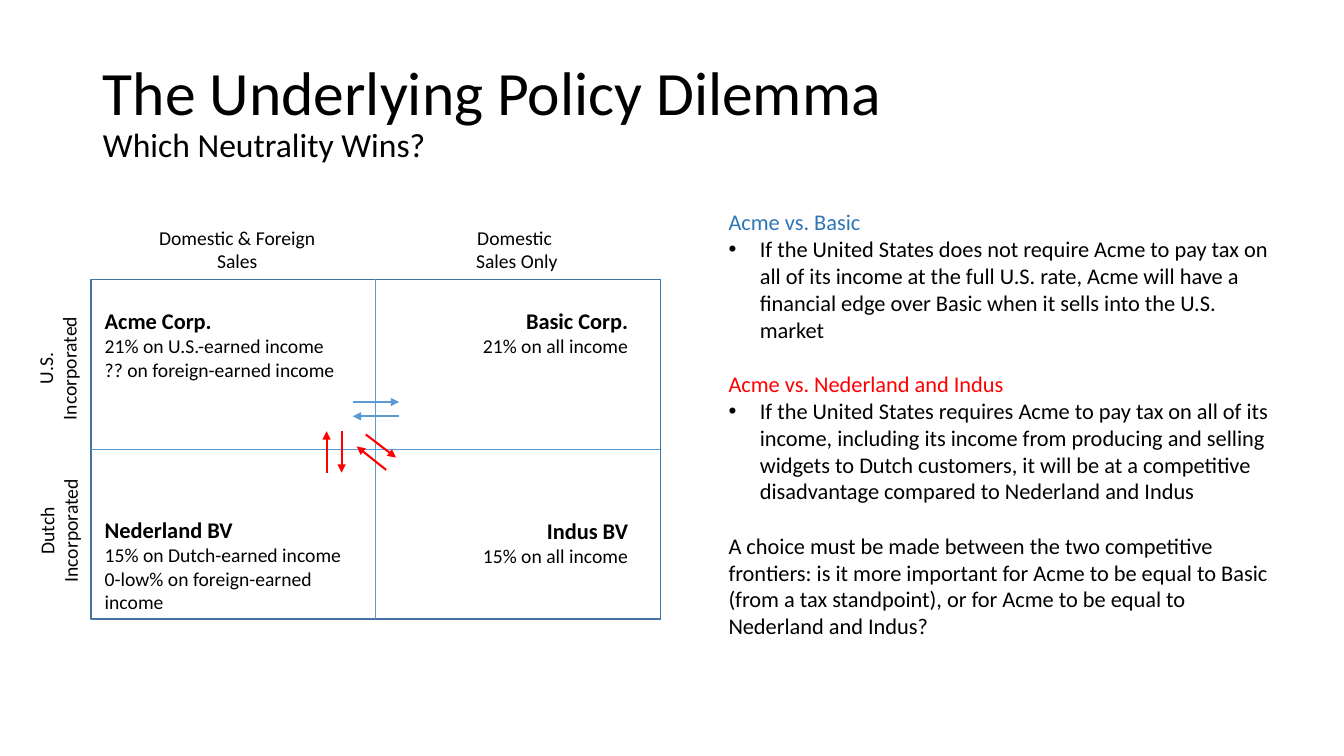
import pptx
import pptx.util
import pptx.dml.color
import pptx.enum.text
import pptx.enum.shapes
import pptx.oxml
import pptx.oxml.ns

Cm, Pt = pptx.util.Cm, pptx.util.Pt
RGB = pptx.dml.color.RGBColor
ALIGN = pptx.enum.text.PP_ALIGN
LINE = pptx.enum.shapes.MSO_CONNECTOR.STRAIGHT

FONT = "Calibri"
BLACK = RGB(0, 0, 0)
RED = RGB(0xFF, 0, 0)
BLUE = RGB(0x5B, 0x9B, 0xD5)
NAVY = RGB(0x43, 0x73, 0x9E)
DEEP = RGB(0x2E, 0x75, 0xB6)

TITLE = ("The Underlying Policy Dilemma", "Which Neutrality Wins?")
GRID = (2.29, 7.04, 14.35, 8.56)

# left, top, width, height, rotation, lines
HEADS = [
    (3.73, 5.56, 4.5, 1.45, 0, ["Domestic & Foreign", "Sales"]),
    (11.73, 5.56, 2.59, 1.45, 0, ["Domestic ", "Sales Only"]),
    (-0.13, 8.56, 3.15, 1.45, 270, ["U.S.", "Incorporated"]),
    (-0.1, 12.65, 3.15, 1.45, 270, ["Dutch", "Incorporated"]),
]

# left, top, width, height, alignment, lines
FIRMS = [
    (2.39, 7.62, 6.45, 2.13, ALIGN.LEFT,
     ["Acme Corp.", "21% on U.S.-earned income", "?? on foreign-earned income"]),
    (10.9, 7.62, 5.18, 1.55, ALIGN.RIGHT,
     ["Basic Corp.", "21% on all income"]),
    (2.39, 12.88, 6.53, 2.74, ALIGN.LEFT,
     ["Nederland BV", "15% on Dutch-earned income", "0-low% on foreign-earned", "income"]),
    (10.9, 12.9, 5.18, 1.55, ALIGN.RIGHT,
     ["Indus BV", "15% on all income"]),
]

# text, colour, bulleted, space before in points
ESSAY_BOX = (18.11, 5.13, 14.4, 11.2)
ESSAY = [
    ("Acme vs. Basic", DEEP, False, 0),
    ("If the United States does not require Acme to pay tax on all of its income "
     "at the full U.S. rate, Acme will have a financial edge over Basic when it "
     "sells into the U.S. market", BLACK, True, 0),
    ("Acme vs. Nederland and Indus", RED, False, 19.5),
    ("If the United States requires Acme to pay tax on all of its income, including "
     "its income from producing and selling widgets to Dutch customers, it will be "
     "at a competitive disadvantage compared to Nederland and Indus", BLACK, True, 0),
    ("A choice must be made between the two competitive frontiers: is it more "
     "important for Acme to be equal to Basic (from a tax standpoint), or for Acme "
     "to be equal to Nederland and Indus?", BLACK, False, 19.5),
]

# start x, start y, end x, end y, colour
ARROWS = [
    (8.89, 10.13, 10.06, 10.13, BLUE),
    (10.06, 10.49, 8.89, 10.49, BLUE),
    (8.61, 10.87, 8.61, 11.91, RED),
    (8.23, 11.91, 8.23, 10.87, RED),
    (9.22, 10.95, 9.98, 11.53, RED),
    (9.73, 11.84, 8.99, 11.25, RED),
]


def style(run, size, color=BLACK, bold=False):
    run.font.name, run.font.size, run.font.bold = FONT, Pt(size), bold
    run.font.color.rgb = color


def add_text(slide, box, lines, wrap=True):
    shape = slide.shapes.add_textbox(*map(Cm, box))
    shape.text_frame.word_wrap = wrap
    shape.text_frame.text = "\n".join(lines)
    return shape


def add_line(slide, ends, color, width):
    line = slide.shapes.add_connector(LINE, *map(Cm, ends))
    line.line.color.rgb, line.line.width = color, Pt(width)
    line._element.spPr.append(pptx.oxml.parse_xml(
        "<a:effectLst %s/>" % pptx.oxml.ns.nsdecls("a")))
    return line


def add_head(line):
    """Put a triangle at the end of the line."""
    line.line._get_or_add_ln().append(pptx.oxml.parse_xml(
        '<a:tailEnd %s type="triangle"/>' % pptx.oxml.ns.nsdecls("a")))


def add_bullet(para):
    props = para._p.get_or_add_pPr()
    props.set("marL", str(Cm(0.79)))
    props.set("indent", str(-Cm(0.79)))
    for tag in ('buFont %s typeface="Arial"', 'buChar %s char="•"'):
        props.append(pptx.oxml.parse_xml(
            "<a:" + tag % pptx.oxml.ns.nsdecls("a") + "/>"))


def add_title(slide):
    title = slide.shapes.title
    title.left, title.top, title.width, title.height = map(Cm, (2.34, 1.02, 29.21, 3.68))
    frame = title.text_frame
    frame.text = "\v".join(TITLE)
    frame.auto_size = pptx.enum.text.MSO_AUTO_SIZE.NONE
    frame.vertical_anchor = pptx.enum.text.MSO_ANCHOR.MIDDLE
    para = frame.paragraphs[0]
    para.alignment, para.line_spacing = ALIGN.LEFT, 0.9
    for run, size in zip(para.runs, (44, 24)):
        style(run, size)


def add_grid(slide):
    grid = slide.shapes.add_shape(
        pptx.enum.shapes.MSO_SHAPE.RECTANGLE, *map(Cm, GRID))
    grid.shadow.inherit = False
    grid.fill.background()
    grid.line.color.rgb, grid.line.width = NAVY, Pt(1)
    left, top, width, height = GRID
    midx, midy = left + width / 2, top + height / 2
    for ends, start, stop in [((midx, top, midx, top + height), 0, 2),
                              ((left, midy, left + width, midy), 1, 3)]:
        line = add_line(slide, ends, BLUE, 0.5)
        line.begin_connect(grid, start)
        line.end_connect(grid, stop)


def main():
    deck = pptx.Presentation()
    deck.slide_width, deck.slide_height = Cm(33.87), Cm(19.05)
    slide = deck.slides.add_slide(deck.slide_layouts[5])
    add_title(slide)
    add_grid(slide)

    for *box, turn, lines in HEADS:
        label = add_text(slide, box, lines, wrap=False)
        label.rotation = turn
        for para in label.text_frame.paragraphs:
            para.alignment = ALIGN.CENTER
            style(para.runs[0], 14)

    for *box, align, lines in FIRMS:
        firm = add_text(slide, box, lines, wrap=align == ALIGN.RIGHT)
        for row, para in enumerate(firm.text_frame.paragraphs):
            para.alignment = align
            style(para.runs[0], 14 if row else 16, bold=row == 0)

    essay = add_text(slide, ESSAY_BOX, [item[0] for item in ESSAY])
    for para, (_, color, bullet, gap) in zip(essay.text_frame.paragraphs, ESSAY):
        para.space_before = Pt(gap)
        style(para.runs[0], 16, color)
        if bullet:
            add_bullet(para)

    for *ends, color in ARROWS:
        add_head(add_line(slide, ends, color, 1.5))

    deck.save("out.pptx")


if __name__ == "__main__":
    main()
